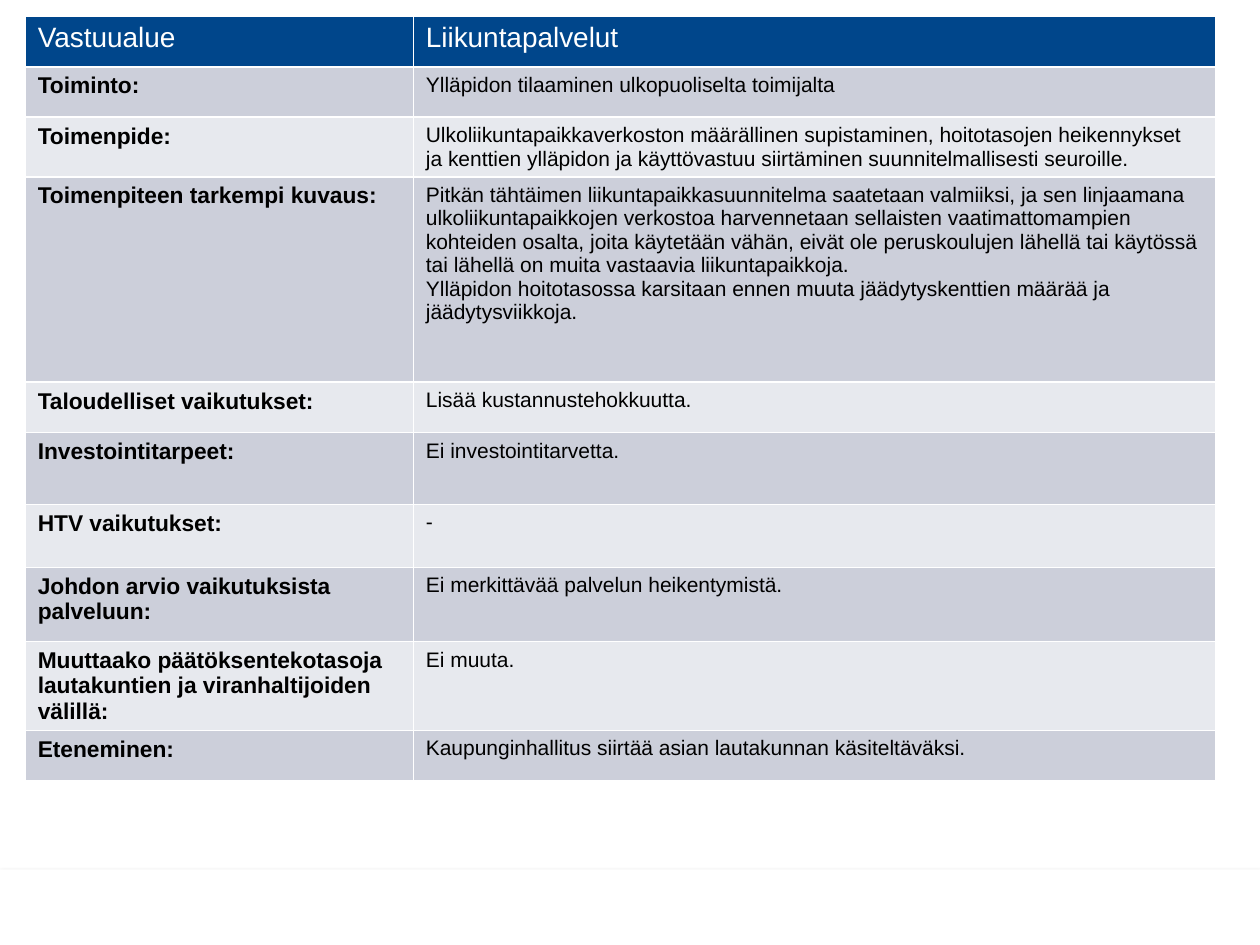
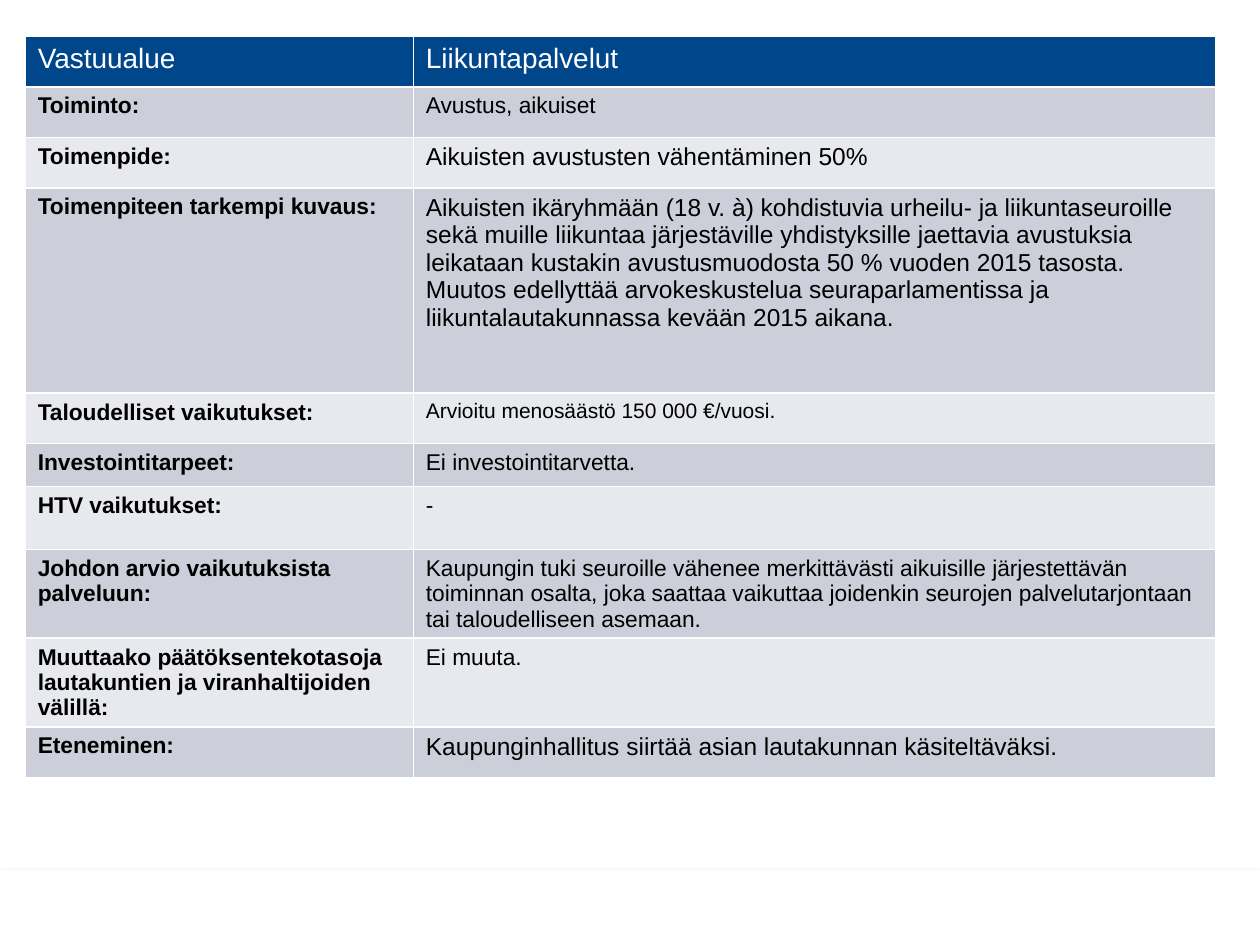
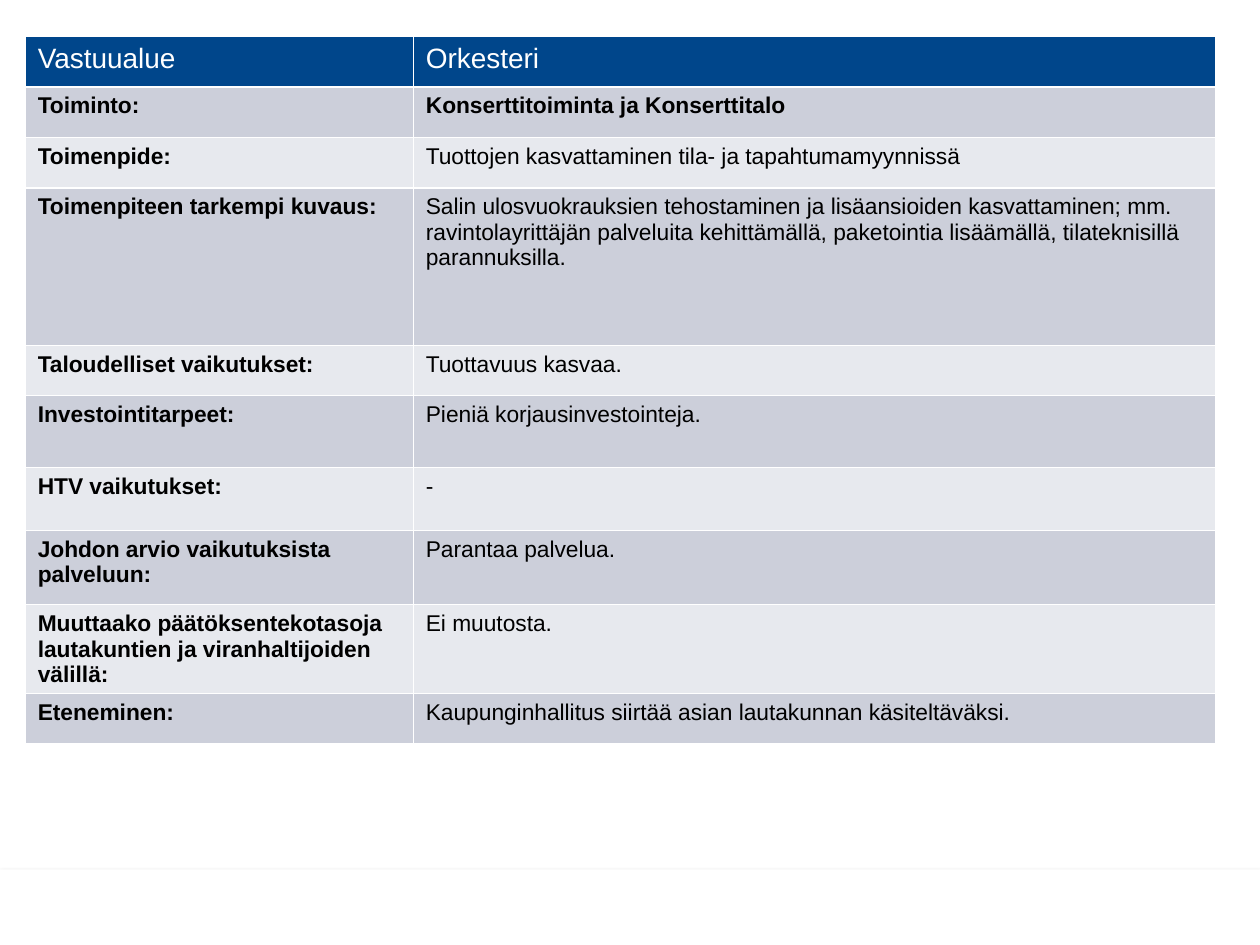
from lxml.etree import SubElement
from pptx import Presentation
from pptx.dml.color import RGBColor
from pptx.enum.shapes import MSO_SHAPE
from pptx.oxml.ns import qn
from pptx.util import Inches, Pt

FONT = "Arial"
WHITE, BLACK = "FFFFFF", "000000"
HEADER_FILL = "00468B"
ROW_FILLS = ("CCCFDA", "E7E9EE")
TABLE_LEFT = 0.2
COLUMN_WIDTHS = (3.08, 6.37)
LABEL_SIZE, HEADER_SIZE = 13, 16

LABELS = [
    "Vastuualue",
    "Toiminto:",
    "Toimenpide:",
    "Toimenpiteen tarkempi kuvaus:",
    "Taloudelliset vaikutukset:",
    "Investointitarpeet:",
    "HTV vaikutukset:",
    "Johdon arvio vaikutuksista palveluun:",
    "Muuttaako päätöksentekotasoja lautakuntien ja viranhaltijoiden välillä:",
    "Eteneminen:",
]
PROGRESS = "Kaupunginhallitus siirtää asian lautakunnan käsiteltäväksi."

# "sizes" and "bold_rows" hold exceptions by row number; 0 is the header row.
MEASURES = [
    {
        "top": 0.13,
        "heights": (0.4, 0.4, 0.4, 1.63, 0.4, 0.57, 0.5, 0.59, 0.7, 0.4),
        "size": 12,
        "sizes": {},
        "bold_rows": (),
        "answers": [
            "Liikuntapalvelut",
            "Ylläpidon tilaaminen ulkopuoliselta toimijalta",
            "Ulkoliikuntapaikkaverkoston määrällinen supistaminen, hoitotasojen "
            "heikennykset ja kenttien ylläpidon ja käyttövastuu siirtäminen "
            "suunnitelmallisesti seuroille.",
            "Pitkän tähtäimen liikuntapaikkasuunnitelma saatetaan valmiiksi, ja sen "
            "linjaamana ulkoliikuntapaikkojen verkostoa harvennetaan sellaisten "
            "vaatimattomampien kohteiden osalta, joita käytetään vähän, eivät ole "
            "peruskoulujen lähellä tai käytössä tai lähellä on muita vastaavia "
            "liikuntapaikkoja.\n"
            "Ylläpidon hoitotasossa karsitaan ennen muuta jäädytyskenttien määrää ja "
            "jäädytysviikkoja.",
            "Lisää kustannustehokkuutta.",
            "Ei investointitarvetta.",
            "-",
            "Ei merkittävää palvelun heikentymistä.",
            "Ei muuta.",
            PROGRESS,
        ],
    },
    {
        "top": 0.29,
        "heights": (0.4, 0.4, 0.4, 1.63, 0.4, 0.34, 0.5, 0.7, 0.7, 0.4),
        "size": 13,
        "sizes": {2: 14, 3: 14, 4: 12, 9: 14},
        "bold_rows": (),
        "answers": [
            "Liikuntapalvelut",
            "Avustus, aikuiset",
            "Aikuisten avustusten vähentäminen 50%",
            "Aikuisten ikäryhmään (18 v. à) kohdistuvia urheilu- ja liikuntaseuroille "
            "sekä muille liikuntaa järjestäville yhdistyksille jaettavia avustuksia "
            "leikataan kustakin avustusmuodosta 50 % vuoden 2015 tasosta.\n"
            "Muutos edellyttää arvokeskustelua seuraparlamentissa ja "
            "liikuntalautakunnassa kevään 2015 aikana.",
            "Arvioitu menosäästö 150 000 €/vuosi.",
            "Ei investointitarvetta.",
            "-",
            "Kaupungin tuki seuroille vähenee merkittävästi aikuisille järjestettävän "
            "toiminnan osalta, joka saattaa vaikuttaa joidenkin seurojen "
            "palvelutarjontaan tai taloudelliseen asemaan.",
            "Ei muuta.",
            PROGRESS,
        ],
    },
    {
        "top": 0.29,
        "heights": (0.4, 0.4, 0.4, 1.25, 0.4, 0.57, 0.5, 0.59, 0.7, 0.4),
        "size": 13,
        "sizes": {},
        "bold_rows": (1,),
        "answers": [
            "Orkesteri",
            "Konserttitoiminta ja Konserttitalo",
            "Tuottojen kasvattaminen tila- ja tapahtumamyynnissä",
            "Salin ulosvuokrauksien tehostaminen ja lisäansioiden kasvattaminen; mm. "
            "ravintolayrittäjän palveluita kehittämällä, paketointia lisäämällä, "
            "tilateknisillä parannuksilla.",
            "Tuottavuus kasvaa.",
            "Pieniä korjausinvestointeja.",
            "-",
            "Parantaa palvelua.",
            "Ei muutosta.",
            PROGRESS,
        ],
    },
]


def set_fill(item, color):
    item.fill.solid()
    item.fill.fore_color.rgb = RGBColor.from_string(color)


def write_cell(cell, text, fill, size, color=BLACK, bold=False):
    set_fill(cell, fill)
    cell.text = text
    for para in cell.text_frame.paragraphs:
        for span in para.runs:
            span.font.name = FONT
            span.font.size = Pt(size)
            span.font.bold = bold
            span.font.color.rgb = RGBColor.from_string(color)


def add_footer_band(deck, page):
    """Draw the shadowed band on a page, then move it to the slide master."""
    band = page.shapes.add_shape(
        MSO_SHAPE.RECTANGLE, 0, Inches(6.9), deck.slide_width, Inches(0.6))
    set_fill(band, WHITE)
    band.line.fill.background()
    band.shadow.inherit = False
    effects = band.element.spPr.find(qn("a:effectLst"))
    shadow = SubElement(effects, qn("a:outerShdw"), blurRad=str(Pt(3.1)),
                        dist=str(Pt(1.8)), dir="5400000", rotWithShape="0")
    tint = SubElement(shadow, qn("a:srgbClr"), val=BLACK)
    SubElement(tint, qn("a:alpha"), val="35000")
    band.element.nvSpPr.cNvPr.set("id", "100")
    deck.slide_master.shapes.element.insert(2, band.element)


def add_measure_table(page, measure):
    heights = measure["heights"]
    table = page.shapes.add_table(
        len(LABELS), len(COLUMN_WIDTHS), Inches(TABLE_LEFT), Inches(measure["top"]),
        Inches(sum(COLUMN_WIDTHS)), Inches(sum(heights))).table
    for column, width in zip(table.columns, COLUMN_WIDTHS):
        column.width = Inches(width)
    for number, (label, answer) in enumerate(zip(LABELS, measure["answers"])):
        table.rows[number].height = Inches(heights[number])
        label_cell, answer_cell = table.rows[number].cells
        if number == 0:
            for cell, text in ((label_cell, label), (answer_cell, answer)):
                write_cell(cell, text, HEADER_FILL, HEADER_SIZE, color=WHITE)
            continue
        fill = ROW_FILLS[(number - 1) % 2]
        write_cell(label_cell, label, fill, LABEL_SIZE, bold=True)
        write_cell(answer_cell, answer, fill,
                   measure["sizes"].get(number, measure["size"]),
                   bold=number in measure["bold_rows"])


def main():
    deck = Presentation()
    deck.slide_width, deck.slide_height = Inches(10), Inches(7.5)
    blank = deck.slide_layouts.get_by_name("Blank")
    pages = [deck.slides.add_slide(blank) for _ in MEASURES]
    add_footer_band(deck, pages[0])
    for page, measure in zip(pages, MEASURES):
        add_measure_table(page, measure)
    deck.save("out.pptx")


if __name__ == "__main__":
    main()
